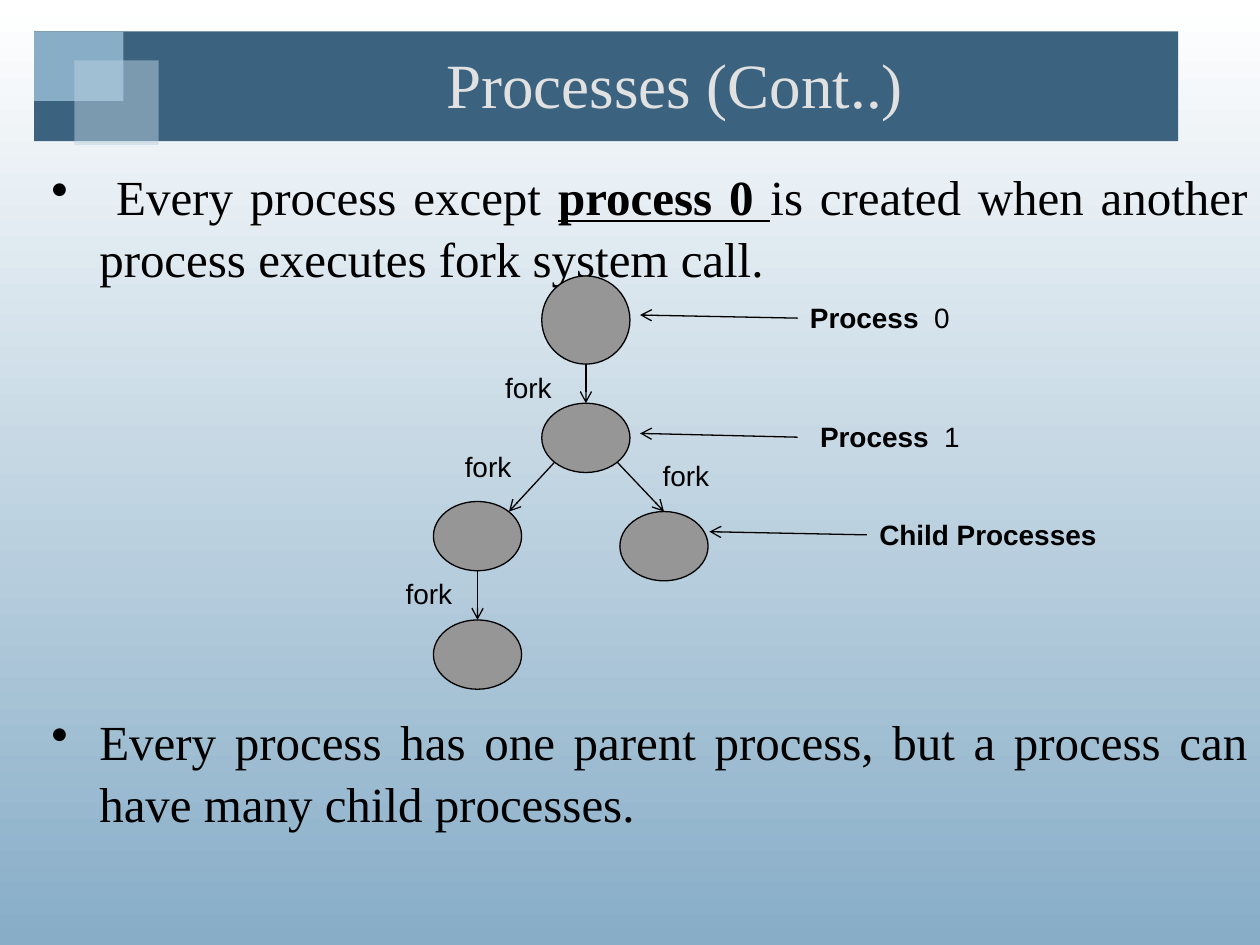
from lxml.etree import SubElement
from pptx import Presentation
from pptx.dml.color import RGBColor
from pptx.enum.shapes import MSO_CONNECTOR as Connector, MSO_SHAPE as Shape
from pptx.enum.text import MSO_ANCHOR as Anchor, MSO_AUTO_SIZE as AutoSize, PP_ALIGN as Align
from pptx.oxml.ns import qn
from pptx.util import Inches, Pt


def paint(color, value):
    """Set a colour from a hex string."""
    color.rgb = RGBColor.from_string(value)


def write(paragraph, text, font="Arial", size=16, color="000000", bold=False, underline=False):
    """Add a formatted run to a paragraph."""
    run = paragraph.add_run()
    run.text = text
    run.font.name, run.font.size = font, Pt(size)
    run.font.bold, run.font.underline = bold, underline
    paint(run.font.color, color)


class ProcessSlide:
    """Hold the style and the slide, and draw each kind of element."""

    serif = "Times New Roman"
    ink = "000000"
    node_fill = "969696"
    node_width = 0.7

    def __init__(self, deck):
        """Add a blank slide with a gradient background."""
        self.slide = deck.slides.add_slide(deck.slide_layouts[6])
        self.shapes = self.slide.shapes
        fill = self.slide.background.fill
        fill.gradient()
        fill.gradient_angle = 270
        for stop, position, value in zip(fill.gradient_stops, (0, 1), ("FFFFFF", "87ADC7")):
            stop.position = position
            paint(stop.color, value)

    def solid(self, preset, box, value, alpha=None):
        """Add a filled preset shape without an outline."""
        shape = self.shapes.add_shape(preset, *map(Inches, box))
        shape.shadow.inherit = False
        shape.fill.solid()
        paint(shape.fill.fore_color, value)
        shape.line.fill.background()
        if alpha:
            color = shape.fill._xPr.find(".//" + qn("a:srgbClr"))
            SubElement(color, qn("a:alpha"), val=str(alpha * 1000))
        return shape

    def node(self, left, top, height=0.55):
        """Add a process ellipse."""
        ellipse = self.solid(Shape.OVAL, (left, top, self.node_width, height), self.node_fill)
        paint(ellipse.line.color, self.ink)
        ellipse.line.width = Pt(0.75)
        return ellipse

    def arrow(self, start, end, source=None, target=None):
        """Add an arrow, joined to the source's left side or the target's top."""
        line = self.shapes.add_connector(Connector.STRAIGHT, *map(Inches, start + end))
        if source:
            line.begin_connect(source, 1)
        if target:
            line.end_connect(target, 0)
        paint(line.line.color, self.ink)
        line.line.width = Pt(0.75)
        SubElement(line.line._get_or_add_ln(), qn("a:tailEnd"), type="arrow")
        SubElement(line._element.spPr, qn("a:effectLst"))

    def text_box(self, box, wrap=True):
        """Add an empty text box."""
        holder = self.shapes.add_textbox(*map(Inches, box))
        holder.text_frame.word_wrap = wrap
        return holder

    def label(self, left, top, width, text, number="", bold=False):
        """Add a short label that does not wrap."""
        holder = self.text_box((left, top, width, 0.37), wrap=False)
        holder.text_frame.auto_size = AutoSize.SHAPE_TO_FIT_TEXT
        paragraph = holder.text_frame.paragraphs[0]
        write(paragraph, text, bold=bold)
        if number:
            write(paragraph, number)
        return holder

    def title(self, box, text):
        """Add the centred title."""
        frame = self.text_box(box).text_frame
        frame.vertical_anchor = Anchor.MIDDLE
        frame.paragraphs[0].alignment = Align.CENTER
        write(frame.paragraphs[0], text, font=self.serif, size=36, color="E1E1E1")

    def bullets(self, box, items):
        """Add justified bullets from pairs of space before and runs."""
        frame = self.text_box(box).text_frame
        for index, (gap, runs) in enumerate(items):
            paragraph = frame.add_paragraph() if index else frame.paragraphs[0]
            paragraph.alignment = Align.JUSTIFY
            paragraph.line_spacing = 1.05
            paragraph.space_before = Pt(gap)
            properties = paragraph._p.get_or_add_pPr()
            properties.set("marL", str(Inches(0.38)))
            properties.set("indent", str(-Inches(0.38)))
            SubElement(properties, qn("a:buChar"), char="•")
            for text, strong in runs:
                write(paragraph, text, font=self.serif, size=28, bold=strong, underline=strong)


def main():
    """Build the slide on processes and save it."""
    deck = Presentation()
    deck.slide_width, deck.slide_height = Inches(10), Inches(7.5)
    page = ProcessSlide(deck)

    page.solid(Shape.RECTANGLE, (0.27, 0.25, 9.08, 0.87), "3B627F")
    page.solid(Shape.RECTANGLE, (0.27, 0.25, 0.71, 0.55), "87ADC7")
    page.solid(Shape.RECTANGLE, (0.59, 0.48, 0.67, 0.67), "BCD1E0", alpha=50)
    page.bullets((0.31, 1.25, 9.69, 5.42), [
        (5.6, [(" Every process except ", False), ("process 0 ", True),
               ("is created when another process executes fork system call.", False)]),
        (241, [("Every process has one parent process, but a process can have many child processes.",
                False)]),
    ])
    page.title((1.33, 0.08, 8.05, 1.17), "Processes (Cont..)")

    page.node(4.3, 2.19, height=0.7)
    first = page.node(4.3, 3.2)
    page.node(3.44, 3.98)
    grandchild = page.node(3.44, 4.92)
    right_child = page.node(4.92, 4.06)

    page.arrow((4.65, 2.89), (4.65, 3.2), target=first)
    page.arrow((4.4, 3.67), (4.04, 4.06))
    page.arrow((4.9, 3.67), (5.27, 4.06), target=right_child)
    page.arrow((3.79, 4.53), (3.79, 4.92), target=grandchild)

    zero_label = page.label(6.33, 2.34, 1.32, "Process", "  0", bold=True)
    page.label(6.41, 3.28, 1.32, "Process", "  1", bold=True)
    child_label = page.label(6.88, 4.06, 2.01, "Child Processes", bold=True)
    for left, top, source in ((6.33, 2.53, zero_label), (6.33, 3.47, None), (6.88, 4.25, child_label)):
        page.arrow((left, top), (left - 1.25, top - 0.03), source=source)

    for left, top in ((3.59, 3.52), (5.16, 3.59), (3.91, 2.89), (3.12, 4.53)):
        page.label(left, top, 0.58, "fork")

    deck.save("out.pptx")


if __name__ == "__main__":
    main()
